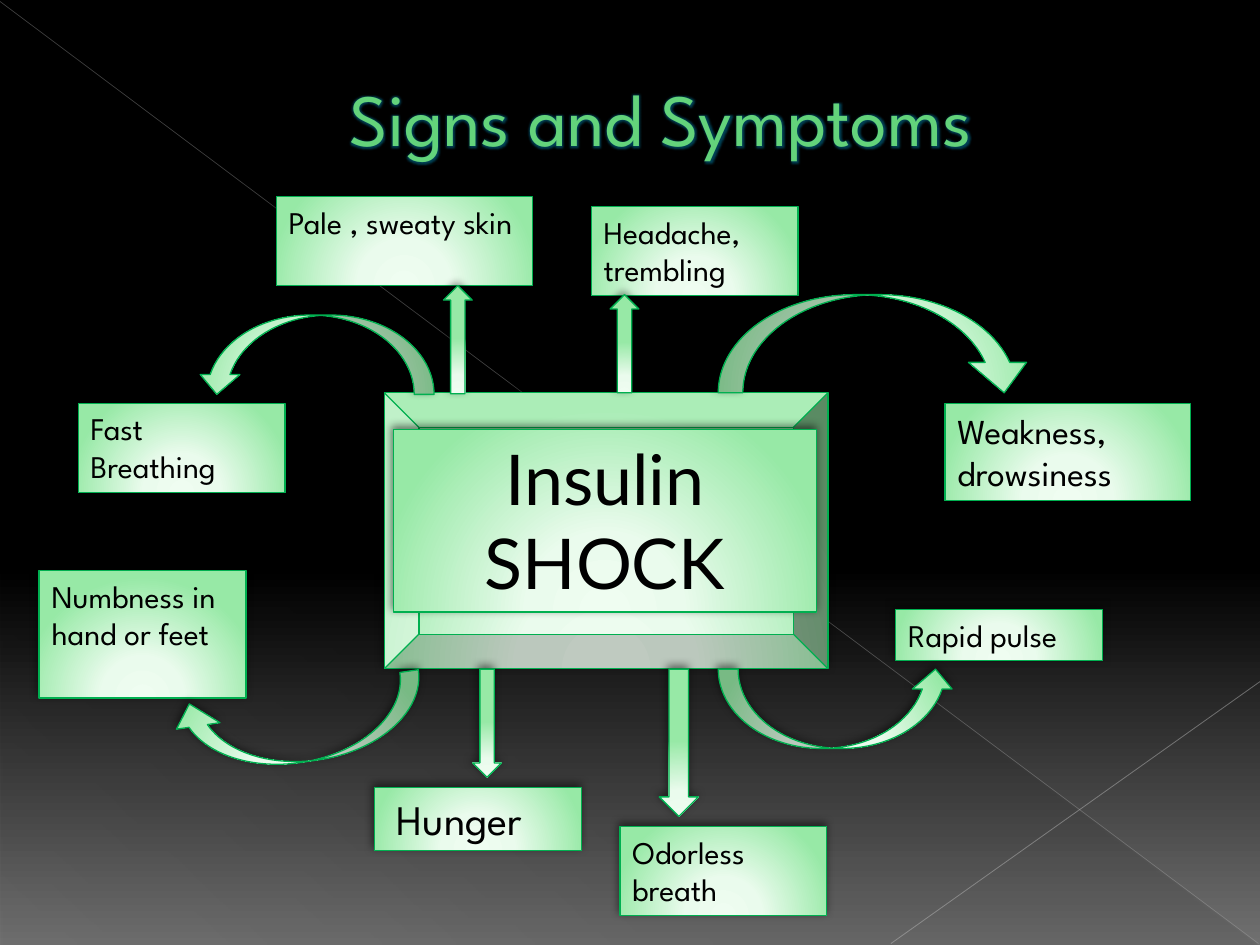
from dataclasses import dataclass

from lxml import etree
from pptx import Presentation
from pptx.dml.color import RGBColor
from pptx.enum import shapes, text
from pptx.oxml import ns, parse_xml
from pptx.util import Cm, Pt

KIND = shapes.MSO_SHAPE
CURVE = (0.25, 0.591, 0.31)


@dataclass(frozen=True)
class Theme:
    """Colours, fonts and type sizes of the slide."""
    backdrop: tuple = ((0, "000000", 100), (60, "000000", 100), (100, "707070", 100))
    shade: tuple = ((0, "000000", 10), (70, "000000", 8), (100, "000000", 1))
    mint: tuple = ((0, "EFFDF1", 100), (34, "EAFBED", 100), (100, "97E9A6", 100))
    edge: str = "00B050"
    ink: str = "000000"
    title: str = "63D37B"
    title_edge: str = "007A37"
    glow: str = "0080A8"
    body_font: str = "League Spartan"
    centre_font: str = "Lato"
    title_size: int = 42
    centre_size: int = 40
    hunger_size: int = 24
    weakness_size: int = 20
    label_size: int = 18


THEME = Theme()
LINEAR = '<a:lin ang="{}" scaled="0"/>'
RADIAL = '<a:path path="circle"><a:fillToRect l="50000" t="155000" r="50000" b="-55000"/></a:path>'


def drawing(tag, body):
    """Return a drawing element with the given content."""
    return parse_xml(f'<a:{tag} {ns.nsdecls("a")}>{body}</a:{tag}>')


def colour(value, alpha=100):
    """Return the markup of a colour with an opacity in percent."""
    return f'<a:srgbClr val="{value}"><a:alpha val="{alpha * 1000}"/></a:srgbClr>'


def paint_gradient(fill, parent, stops, direction):
    """Replace the fill held by parent with a gradient."""
    fill.solid()
    fill.fore_color.rgb = RGBColor.from_string(stops[0][1])
    marks = "".join(f'<a:gs pos="{place * 1000}">{colour(value, alpha)}</a:gs>'
                    for place, value, alpha in stops)
    solid = parent.find(ns.qn("a:solidFill"))
    parent.replace(solid, drawing("gradFill", f"<a:gsLst>{marks}</a:gsLst>{direction}"))


def place(box, left, top, width, height):
    """Return lengths for a part given in centimetres relative to a box."""
    return Cm(box[0] + left), Cm(box[1] + top), Cm(width), Cm(height)


def style_text(paragraph, font, size, value):
    """Set the font, size and colour of every run."""
    for run in paragraph.runs:
        run.font.name = font
        run.font.size = Pt(size)
        run.font.color.rgb = RGBColor.from_string(value)


def add_mint_shape(slide, box, kind, area, adjustments=(), rotation=0):
    """Add a pale green shape with a green edge and a soft shadow."""
    shape = slide.shapes.add_shape(kind, *place(box, *area))
    shape.rotation = rotation
    for index, value in enumerate(adjustments):
        shape.adjustments[index] = value
    properties = shape.element.spPr
    paint_gradient(shape.fill, properties, THEME.mint, RADIAL)
    shape.line.color.rgb = RGBColor.from_string(THEME.edge)
    shape.line.width = Pt(0.75)
    shape.shadow.inherit = False
    properties.find(ns.qn("a:effectLst")).append(parse_xml(
        f'<a:outerShdw {ns.nsdecls("a")} blurRad="{Pt(5)}" dist="{Pt(2)}" dir="14700000" '
        f'algn="ctr" rotWithShape="0">{colour("000000", 50)}</a:outerShdw>'))
    return shape


def add_label(slide, box, wording, area, size, font=THEME.body_font,
              alignment=text.PP_ALIGN.LEFT, margin=0.25):
    """Add a pale green box with text."""
    shape = add_mint_shape(slide, box, KIND.RECTANGLE, area)
    frame = shape.text_frame
    frame.text = wording
    frame.word_wrap = True
    frame.auto_size = text.MSO_AUTO_SIZE.SHAPE_TO_FIT_TEXT
    frame.vertical_anchor = text.MSO_ANCHOR.TOP
    frame.margin_left = Cm(margin)
    paragraph = frame.paragraphs[0]
    paragraph.alignment = alignment
    style_text(paragraph, font, size, THEME.ink)


def add_backdrop(slide, box):
    """Paint the background with its faint triangle and diagonals."""
    background = slide.background.fill
    background.solid()
    properties = slide.element.find(".//" + ns.qn("p:bgPr"))
    paint_gradient(background, properties, THEME.backdrop, LINEAR.format(5400000))

    triangle = slide.shapes.add_shape(
        KIND.RIGHT_TRIANGLE, *place(box, 0.03, 0.05, 25.35, 19))
    paint_gradient(triangle.fill, triangle.element.spPr, THEME.shade, LINEAR.format(7980000))
    triangle.line.fill.background()
    triangle.shadow.inherit = False

    diagonals = (((0, 0.03), (25.37, 19.02), "B4B4B4", 0.39, 35),
                 ((25.4, 13.74), (17.96, 19.02), "BDBDBD", 0.47, 45))
    for start, end, value, width, alpha in diagonals:
        points = [Cm(origin + offset) for point in (start, end)
                  for origin, offset in zip(box, point)]
        line = slide.shapes.add_connector(shapes.MSO_CONNECTOR.STRAIGHT, *points)
        line.line.color.rgb = RGBColor.from_string(value)
        line.line.width = Pt(width)
        tint = line.element.spPr.find(".//" + ns.qn("a:srgbClr"))
        etree.SubElement(tint, ns.qn("a:alpha")).set("val", str(alpha * 1000))
        line.element.spPr.append(drawing("effectLst", ""))


def add_title(slide, box):
    """Place the glowing title in front of the backdrop."""
    title = slide.shapes.title
    title.element.getparent().append(title.element)
    title.left, title.top, title.width, title.height = place(box, 0, 0, *box[2:])
    frame = title.text_frame
    frame.text = "Signs and Symptoms"
    frame.vertical_anchor = text.MSO_ANCHOR.MIDDLE
    paragraph = frame.paragraphs[0]
    paragraph.alignment = text.PP_ALIGN.CENTER
    indent = paragraph._p.get_or_add_pPr()
    indent.set("marL", str(Cm(1.35)))
    indent.set("indent", "0")
    style_text(paragraph, THEME.body_font, THEME.title_size, THEME.title)
    properties = paragraph.runs[0].font._element
    outline = drawing("ln", f"<a:solidFill>{colour(THEME.title_edge)}</a:solidFill>")
    outline.set("w", str(Pt(0.5)))
    properties.insert(0, outline)
    properties.find(ns.qn("a:solidFill")).addnext(drawing(
        "effectLst", f'<a:glow rad="{Pt(4)}">{colour(THEME.glow, 50)}</a:glow>'))


def add_symptom_map(slide, box):
    """Draw the central condition, its symptoms and the arrows between them."""
    add_mint_shape(slide, box, KIND.BEVEL, (6.96, 3.96, 8.94, 5.56))
    add_label(slide, box, "Insulin SHOCK", (7.14, 4.7, 8.53, 3.68), THEME.centre_size,
              THEME.centre_font, text.PP_ALIGN.CENTER)

    width, height, size = 4.17, 1.8, THEME.label_size
    symptoms = (
        ("Weakness, drowsiness", (18.26, 4.17, 4.95, 1.96), THEME.weakness_size, 0.25),
        ("Rapid pulse", (17.27, 8.33, width, 1.02), size, 0.25),
        ("Headache, trembling", (11.13, 0.2, width, height), size, 0.25),
        ("Pale , sweaty skin", (4.78, 0, 5.16, height), size, 0.25),
        ("Odorless breath", (11.71, 12.7, width, height), size, 0.25),
        ("Hunger", (6.76, 11.91, width, 1.27), THEME.hunger_size, 0.45),
        ("Numbness in hand or feet", (0, 7.54, width, 2.57), size, 0.25),
        ("Fast Breathing", (0.79, 4.17, width, height), size, 0.25),
    )
    for wording, area, type_size, margin in symptoms:
        add_label(slide, box, wording, area, type_size, margin=margin)

    arrows = (
        (KIND.CURVED_DOWN_ARROW, (13.69, 1.98, 6.35, 1.98), CURVE, 0),
        (KIND.CURVED_UP_ARROW, (13.69, 9.53, 4.78, 1.6), (), 0),
        (KIND.CURVED_DOWN_ARROW, (2.67, 9.91, 5.11, 1.5), CURVE, 171.5),
        (KIND.CURVED_UP_ARROW, (3.18, 2.39, 4.78, 1.6), (), 180),
        (KIND.DOWN_ARROW, (8.74, 9.53, 0.58, 2.18), (), 0),
        (KIND.DOWN_ARROW, (12.5, 9.53, 0.79, 2.97), (), 0),
        (KIND.UP_ARROW, (8.15, 1.8, 0.58, 2.18), (), 0),
        (KIND.UP_ARROW, (11.51, 1.98, 0.58, 1.98), (), 0),
    )
    for kind, area, adjustments, rotation in arrows:
        add_mint_shape(slide, box, kind, area, adjustments, rotation)


def main():
    """Build and save the presentation."""
    presentation = Presentation()
    presentation.slide_width, presentation.slide_height = Cm(25.4), Cm(19.05)
    slide = presentation.slides.add_slide(presentation.slide_layouts.get_by_name("Title Only"))
    add_backdrop(slide, (0, 0, 25.4, 19.05))
    add_title(slide, (1.22, 0.41, 22.86, 3.89))
    add_symptom_map(slide, (0.79, 3.96, 23.22, 14.5))
    presentation.save("out.pptx")


if __name__ == "__main__":
    main()
